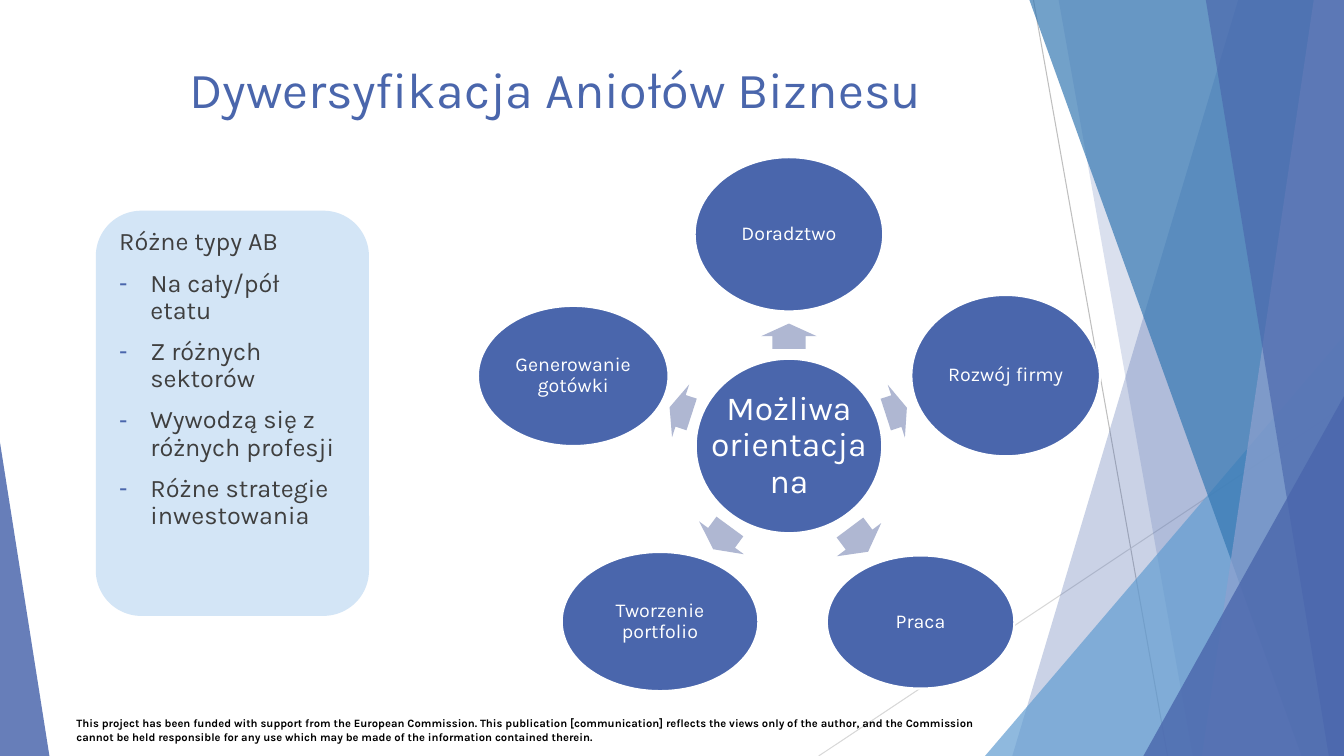
from math import cos, radians, sin

from lxml import etree
from pptx import Presentation
from pptx import util as u
from pptx.dml import color as dml
from pptx.enum import shapes, text
from pptx.oxml import ns

COLUMNS, ROWS = 133.3, 75
BLUE, ARROW, PALE, WHITE, DARK = "4A66AC", "AFB7D2", "D3E5F6", "FFFFFF", "3F3F3F"
OVAL = shapes.MSO_SHAPE.OVAL
TRIANGLE = shapes.MSO_SHAPE.ISOSCELES_TRIANGLE
RIGHT_ARROW = shapes.MSO_SHAPE.RIGHT_ARROW
CENTER, LEFT = text.PP_ALIGN.CENTER, text.PP_ALIGN.LEFT
TOP, MIDDLE = text.MSO_ANCHOR.TOP, text.MSO_ANCHOR.MIDDLE

GUIDE_LINES = [((102.5, 0), (115.8, 75), "BFBFBF"), ((133.3, 40.3), (81.2, 75), "D8D8D8")]
BACK_BANDS = [(122.8, 100.4, BLUE, 29), (105, 118.3, BLUE, 20)]
FRONT_BANDS = [(102.1, 129.1, "3477B2", 69), (130.3, 119.2, "8FA1CF", 69), (119.6, 131.8, BLUE, 64)]
BACK_TRIANGLE = (97.7, 33.3, 35.6, 41.7)
FRONT_TRIANGLES = [((113.4, 39.3, 19.9, 35.7), 1, 80), ((0, 43.9, 4.9, 31.1), 0, 84)]

FOOTER = (
    "This project has been funded with support from the European Commission. "
    "This publication [communication] reflects the views only of the author, and the Commission "
    "cannot be held responsible for any use which may be made of the information contained therein."
)
INVESTOR_TYPES = [
    "Na cały/pół etatu",
    "Z różnych sektorów",
    "Wywodzą się z różnych profesji",
    "Różne strategie inwestowania",
]
HUB = (78.25, 44.25)
TOPICS = [
    ("Doradztwo", 270, 21, (18.7, 15.3), 10.9, 2.5),
    ("Rozwój firmy", 342, 22.6, (18.7, 16), 11.2, 2.2),
    ("Praca", 53.2, 21.8, (18.6, 13.2), 11.6, 3),
    ("Tworzenie portfolio", 126.3, 21.6, (19.5, 13.8), 11.3, 2.8),
    ("Generowanie gotówki", 198, 22.5, (18.9, 13.9), 11.3, 2.3),
]


def rgb(value):
    """Turn a hex string into a colour."""
    return dml.RGBColor.from_string(value)


def around(center, size):
    """Return the box of a size centred on a point."""
    return center[0] - size[0] / 2, center[1] - size[1] / 2, *size


def on_ray(angle, distance):
    """Return the point at an angle and distance from the hub."""
    return HUB[0] + distance * cos(radians(angle)), HUB[1] + distance * sin(radians(angle))


class Canvas:
    """Hold the style and the current slide."""

    font = "Karla"

    def __init__(self, presentation):
        """Add a title-and-body slide."""
        self.column = presentation.slide_width / COLUMNS
        self.row = presentation.slide_height / ROWS
        self.slide = presentation.slides.add_slide(presentation.slide_layouts[1])

    def point(self, x, y):
        """Convert grid columns and rows to slide units."""
        return round(x * self.column), round(y * self.row)

    def box(self, box):
        """Convert a grid box to slide units."""
        return *self.point(*box[:2]), *self.point(*box[2:])

    def paint(self, shape, fill, opacity=100, line=None):
        """Fill and outline a shape without a shadow."""
        shape.shadow.inherit = False
        shape.fill.solid()
        shape.fill.fore_color.rgb = rgb(fill)
        if opacity < 100:
            color = next(shape.element.iter(ns.qn("a:srgbClr")))
            etree.SubElement(color, ns.qn("a:alpha")).set("val", str(opacity * 1000))
        if line:
            shape.line.color.rgb = rgb(line)
            shape.line.width = u.Pt(1.5)
        else:
            shape.line.fill.background()

    def shape(self, kind, box, fill, opacity=100, line=None, adjustments=(), rotation=0):
        """Add a painted preset shape."""
        shape = self.slide.shapes.add_shape(kind, *self.box(box))
        for index, value in enumerate(adjustments):
            shape.adjustments[index] = value
        shape.rotation = rotation
        self.paint(shape, fill, opacity, line)
        return shape

    def band(self, top, bottom, fill, opacity):
        """Add a slanted band reaching the right edge."""
        start, *corners = [
            self.point(*corner)
            for corner in ((top, 0), (COLUMNS, 0), (COLUMNS, ROWS), (bottom, ROWS))
        ]
        builder = self.slide.shapes.build_freeform(*start)
        builder.add_line_segments(corners, close=True)
        self.paint(builder.convert_to_shape(), fill, opacity)

    def line(self, start, end, color):
        """Add a thin straight line."""
        connector = self.slide.shapes.add_connector(
            shapes.MSO_CONNECTOR.STRAIGHT, *self.point(*start), *self.point(*end)
        )
        connector.line.color.rgb = rgb(color)
        connector.line.width = u.Pt(0.75)
        etree.SubElement(connector.element.spPr, ns.qn("a:effectLst"))

    def frame(self, shape, anchor=TOP, inset=(0.1, 0.05)):
        """Set up the text frame of a shape."""
        frame = shape.text_frame
        frame.word_wrap = True
        frame.auto_size = text.MSO_AUTO_SIZE.NONE
        frame.vertical_anchor = anchor
        frame.margin_left = frame.margin_right = u.Inches(inset[0])
        frame.margin_top = frame.margin_bottom = u.Inches(inset[1])
        return frame

    def add_words(self, paragraph, words, size, color, align=LEFT, spacing=0.9, before=0, bold=False):
        """Add one formatted run to a paragraph."""
        paragraph.alignment = align
        paragraph.line_spacing = spacing
        paragraph.space_before = u.Pt(before)
        run = paragraph.add_run()
        run.text = words
        run.font.name = self.font
        run.font.size = u.Pt(size)
        run.font.bold = bold
        run.font.color.rgb = rgb(color)

    def bullet(self, paragraph, mark=None):
        """Give a paragraph a hanging mark, or none."""
        properties = paragraph._p.get_or_add_pPr()
        indent = u.Inches(0.31) if mark else 0
        properties.set("marL", str(indent))
        properties.set("indent", str(-indent))
        if mark:
            color = etree.SubElement(properties, ns.qn("a:buClr"))
            etree.SubElement(color, ns.qn("a:srgbClr")).set("val", BLUE)
            etree.SubElement(properties, ns.qn("a:buChar")).set("char", mark)
        else:
            etree.SubElement(properties, ns.qn("a:buNone"))

    def label(self, box, words, size, color, anchor=TOP, inset=(0.1, 0.05), **style):
        """Add a text box."""
        frame = self.frame(self.slide.shapes.add_textbox(*self.box(box)), anchor, inset)
        self.add_words(frame.paragraphs[0], words, size, color, **style)

    def placeholder(self, index, box):
        """Move a placeholder into place, in front of the rest."""
        shape = self.slide.placeholders[index]
        shape.left, shape.top, shape.width, shape.height = self.box(box)
        shape.element.getparent().append(shape.element)
        return shape

    def title(self, box, words):
        """Fill the title placeholder."""
        frame = self.frame(self.placeholder(0, box))
        self.add_words(frame.paragraphs[0], words, 36, BLUE, CENTER, spacing=1)

    def card(self, box, heading, items):
        """Fill the body placeholder as a rounded card."""
        shape = self.placeholder(1, box)
        geometry = etree.SubElement(shape.element.spPr, ns.qn("a:prstGeom"))
        geometry.set("prst", "flowChartAlternateProcess")
        etree.SubElement(geometry, ns.qn("a:avLst"))
        shape.fill.solid()
        shape.fill.fore_color.rgb = rgb(PALE)
        frame = self.frame(shape)
        self.bullet(frame.paragraphs[0])
        self.add_words(frame.paragraphs[0], heading, 18, DARK)
        for item in items:
            paragraph = frame.add_paragraph()
            self.bullet(paragraph, "-")
            self.add_words(paragraph, item, 18, DARK, before=10)

    def topic(self, words, angle, distance, size, arrow_distance, arrow_length):
        """Add an arrow from the hub and the ellipse it points to."""
        arrow = around(on_ray(angle, arrow_distance), (arrow_length, 5.5))
        self.shape(RIGHT_ARROW, arrow, ARROW, adjustments=(0.6, 0.5), rotation=angle)
        ellipse = self.shape(OVAL, around(on_ray(angle, distance), size), BLUE, line=WHITE)
        frame = self.frame(ellipse, MIDDLE, (0.02, 0.02))
        self.add_words(frame.paragraphs[0], words, 14, WHITE, CENTER)


def main():
    """Build and save the slide."""
    presentation = Presentation()
    presentation.slide_width, presentation.slide_height = u.Inches(13.33), u.Inches(7.5)
    canvas = Canvas(presentation)
    for guide in GUIDE_LINES:
        canvas.line(*guide)
    for band in BACK_BANDS:
        canvas.band(*band)
    canvas.shape(TRIANGLE, BACK_TRIANGLE, "629DD1", 71, adjustments=(1,))
    for band in FRONT_BANDS:
        canvas.band(*band)
    for box, apex, opacity in FRONT_TRIANGLES:
        canvas.shape(TRIANGLE, box, BLUE, opacity, adjustments=(apex,))
    canvas.label((6.6, 70.6, 94.6, 3.7), FOOTER, 8, "000000", spacing=1, bold=True)
    canvas.title((-4.9, 5.3, 120, 10.1), "Dywersyfikacja Aniołów Biznesu")
    canvas.card((9.5, 20.9, 27.1, 40.2), "Różne typy AB", INVESTOR_TYPES)
    canvas.shape(OVAL, around(HUB, (18.5, 17.3)), BLUE, line=WHITE)
    hub_box = around(HUB, (16.6, 14.4))
    canvas.label(hub_box, "Możliwa orientacja na", 24, WHITE, MIDDLE, (0.03, 0.03), align=CENTER)
    for topic in TOPICS:
        canvas.topic(*topic)
    presentation.save("out.pptx")


if __name__ == "__main__":
    main()
